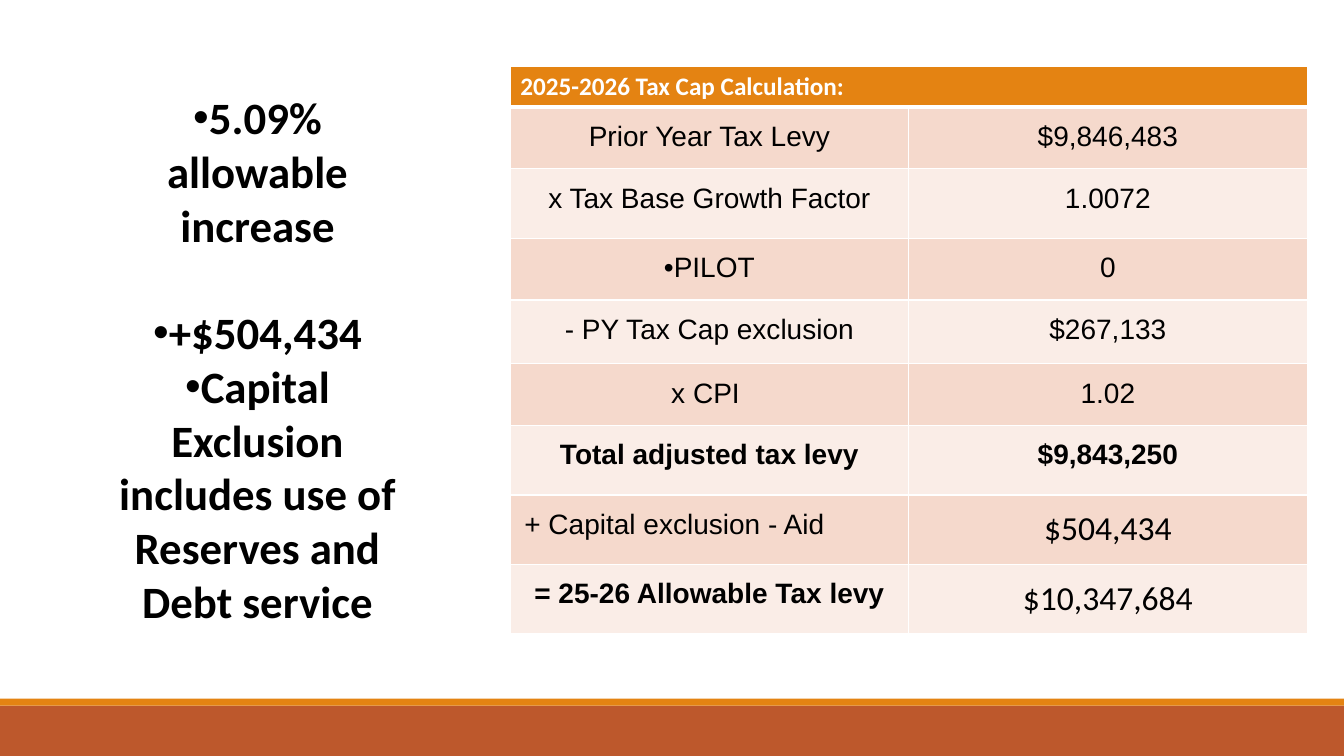
from dataclasses import dataclass

from lxml import etree
from pptx import Presentation
from pptx import util as u
from pptx.dml import color
from pptx.enum import shapes, text
from pptx.oxml import ns


@dataclass(frozen=True)
class Theme:
    rust: str = "BD582C"
    orange: str = "E48312"
    dark_band: str = "F5D9CC"
    light_band: str = "FAEDE7"
    ink: str = "000000"
    paper: str = "FFFFFF"
    body_font: str = "Calibri"
    table_font: str = "Arial"
    list_size: int = 32
    header_size: int = 18
    cell_size: int = 20
    amount_size: int = 24


THEME = Theme()
CENTER = text.PP_ALIGN.CENTER
LEFT = text.PP_ALIGN.LEFT


def rgb(value):
    return color.RGBColor.from_string(value)


def write(para, words, *, size, font, ink=THEME.ink, bold=False,
          align=CENTER, bullet=False, before=0):
    properties = para._p.get_or_add_pPr()
    if bullet:
        properties.set("marL", "0")
        properties.set("indent", "0")
        etree.SubElement(properties, ns.qn("a:buFont"), typeface="Arial")
        etree.SubElement(properties, ns.qn("a:buChar"), char="•")
    para.alignment = align
    para.space_before = u.Pt(before)
    span = para.add_run()
    span.text = words
    span.font.size = u.Pt(size)
    span.font.name = font
    span.font.bold = bold
    span.font.color.rgb = rgb(ink)


def outline(cell, ink, bottom=1):
    """Draw the four cell borders, 1 pt wide except for the bottom one."""
    properties = cell._tc.get_or_add_tcPr()
    for side, points in (("L", 1), ("R", 1), ("T", 1), ("B", bottom)):
        line = etree.SubElement(properties, ns.qn(f"a:ln{side}"), w=str(u.Pt(points)))
        fill = etree.SubElement(line, ns.qn("a:solidFill"))
        etree.SubElement(fill, ns.qn("a:srgbClr"), val=ink)


class Page:
    """One slide; every length is a percentage of its width or height."""

    def __init__(self, deck, theme):
        self.deck = deck
        self.theme = theme
        self.slide = deck.slides.add_slide(deck.slide_layouts[1])
        title = self.slide.shapes.title
        title.element.getparent().remove(title.element)

    def across(self, share):
        return u.Emu(round(self.deck.slide_width * share / 100))

    def down(self, share):
        return u.Emu(round(self.deck.slide_height * share / 100))

    def frame(self, left, top, width, height):
        return self.across(left), self.down(top), self.across(width), self.down(height)

    def bar(self, top, height, fill):
        box = self.slide.shapes.add_shape(
            shapes.MSO_SHAPE.RECTANGLE, *self.frame(0, top, 100, height))
        box.shadow.inherit = False
        box.fill.solid()
        box.fill.fore_color.rgb = rgb(fill)
        box.line.fill.background()

    def bullets(self, place, items):
        """Fill the body placeholder with (words, space before) items."""
        box = self.slide.placeholders[1]
        box.left, box.top, box.width, box.height = self.frame(*place)
        body = box.text_frame
        body.word_wrap = True
        body.auto_size = text.MSO_AUTO_SIZE.SHAPE_TO_FIT_TEXT
        body.vertical_anchor = text.MSO_ANCHOR.TOP
        for index, (words, before) in enumerate(items):
            para = body.add_paragraph() if index else body.paragraphs[0]
            write(para, words, size=self.theme.list_size, font=self.theme.body_font,
                  bold=True, bullet=True, before=before)

    def cell(self, cell, words, fill, *, margin=None, bottom=1, **style):
        outline(cell, self.theme.paper, bottom)
        cell.fill.solid()
        cell.fill.fore_color.rgb = rgb(fill)
        if margin:
            cell.margin_left = cell.margin_right = u.Inches(margin)
            cell.margin_top = cell.margin_bottom = u.Inches(margin)
        write(cell.text_frame.paragraphs[0], words, **style)

    def table(self, place, heading, header_height, rows):
        theme = self.theme
        holder = self.slide.shapes.add_table(len(rows) + 1, 2, *self.frame(*place))
        grid = holder.table
        heights = [header_height] + [row[0] for row in rows]
        for line, height in zip(grid.rows, heights):
            line.height = self.down(height)
        holder.height = self.down(place[3])
        grid.cell(0, 0).merge(grid.cell(0, 1))
        self.cell(grid.cell(0, 0), heading, theme.orange, bottom=3, align=LEFT,
                  size=theme.header_size, font=theme.body_font,
                  ink=theme.paper, bold=True)
        plain = {"size": theme.cell_size, "font": theme.table_font}
        for number, (_, label, value, label_style, value_style) in enumerate(rows, 1):
            fill = theme.dark_band if number % 2 else theme.light_band
            for column, words, style in ((0, label, label_style), (1, value, value_style)):
                self.cell(grid.cell(number, column), words, fill, margin=0.14,
                          **{**plain, **style})


def main():
    deck = Presentation()
    deck.slide_width, deck.slide_height = u.Inches(13.33), u.Inches(7.5)
    page = Page(deck, THEME)
    page.bar(93.33, 6.67, THEME.rust)
    page.bar(92.4, 0.93, THEME.orange)

    short, medium, tall = 6.4, 8.4, 9.2
    bold = {"bold": True}
    amount = {"size": THEME.amount_size, "font": THEME.body_font}
    page.table((37.96, 8.8, 59.3, 75.47), "2025-2026 Tax Cap Calculation:", 4.13, [
        (short, "Prior Year Tax Levy", "$9,846,483", {}, {}),
        (tall, "x Tax Base Growth Factor", "1.0072", {}, {}),
        (short, "PILOT", "0", {"bullet": True}, {}),
        (medium, "- PY Tax Cap exclusion", "$267,133", {}, {}),
        (short, "x CPI ", "1.02", {}, {}),
        (tall, "Total adjusted tax levy", "$9,843,250", bold, bold),
        (tall, "+ Capital exclusion - Aid", "$504,434", {"align": LEFT}, amount),
        (tall, "= 25-26 Allowable Tax levy", "$10,347,684", bold, amount),
    ])

    blank_line = 1.2 * THEME.list_size
    page.bullets((7.65, 11.2, 23.03, 73.2), [
        ("5.09% allowable increase", 0),
        ("+$504,434", blank_line),
        ("Capital Exclusion includes use of Reserves and Debt service", 0),
    ])
    deck.save("out.pptx")


if __name__ == "__main__":
    main()
